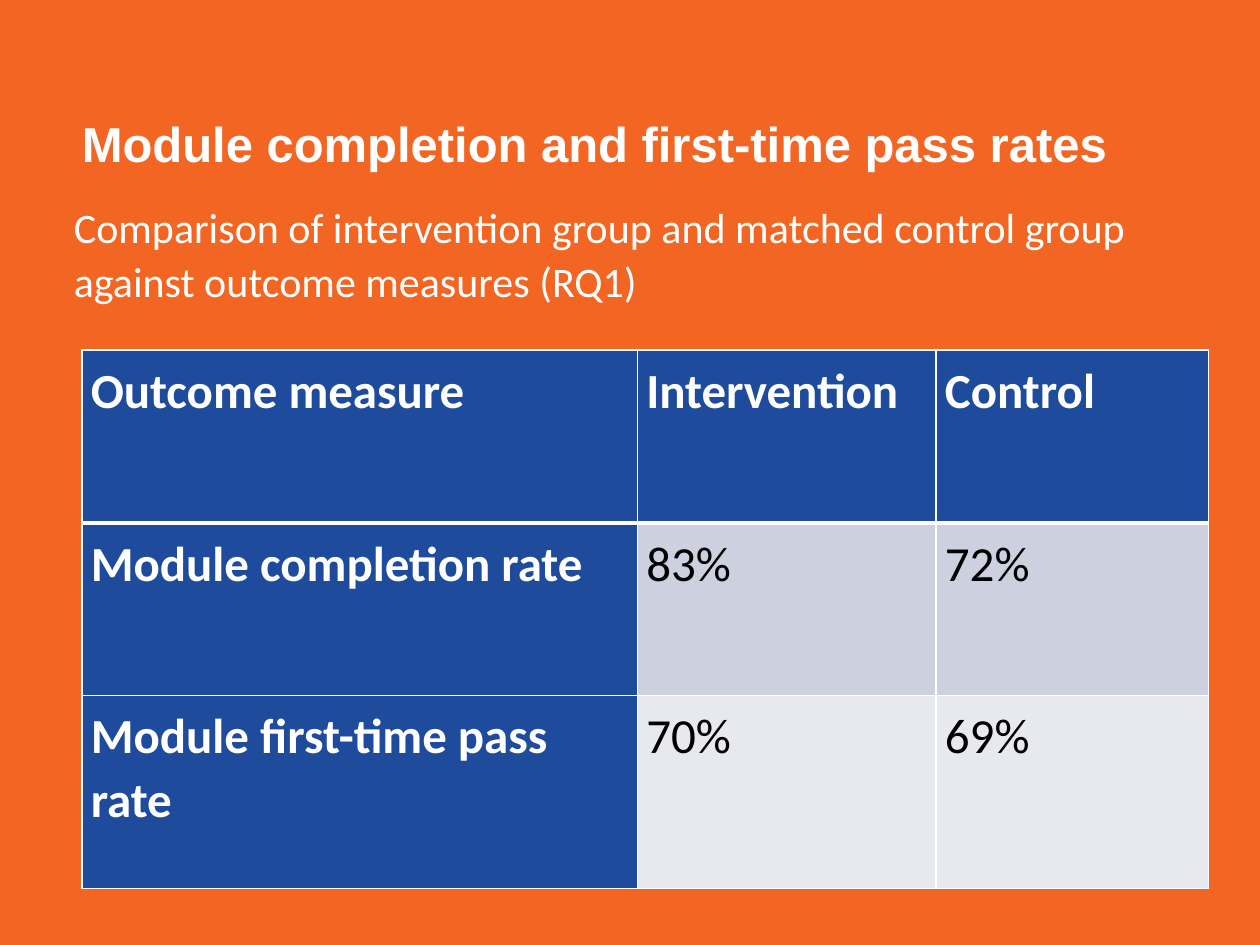
from dataclasses import dataclass

from lxml.etree import SubElement
from pptx import Presentation
from pptx.dml.color import RGBColor
from pptx.enum.text import MSO_ANCHOR, MSO_AUTO_SIZE, PP_ALIGN
from pptx.oxml.ns import qn
from pptx.util import Cm, Pt


@dataclass(frozen=True)
class Theme:
    background: str = "F26522"
    light_text: str = "FFFFFF"
    dark_text: str = "000000"
    heading_fill: str = "1E4B9B"
    row_fills: tuple = ("CDD0DE", "E8E9EF")
    rule: str = "FFFFFF"
    thin_rule: int = 1
    thick_rule: int = 3
    title_font: str = "Arial"
    body_font: str = "Calibri"
    title_size: int = 28
    intro_size: int = 24
    table_size: int = 28


THEME = Theme()
TITLE = "Module completion and first-time pass rates"
INTRO = ("Comparison of intervention group and matched control group "
         "against outcome measures (RQ1)")
OUTCOMES = [
    ("Outcome measure", "Intervention", "Control"),
    ("Module completion rate", "83%", "72%"),
    ("Module first-time pass rate", "70%", "69%"),
]
COLUMN_WIDTHS = (11.2, 6.02, 5.49)
ROW_HEIGHTS = (3.48, 3.48, 3.89)

TITLE_BOX = (1.65, 2.41, 21.08, 1.07)
INTRO_BOX = (1.24, 3.86, 22.71, 2.41)
TABLE_BOX = (1.65, 7.06, sum(COLUMN_WIDTHS), sum(ROW_HEIGHTS))

TITLE_PARAGRAPH = {"line_spacing": 0.9, "alignment": PP_ALIGN.LEFT}
BODY_PARAGRAPH = {"line_spacing": 1.07, "space_after": Pt(8)}
TITLE_FRAME = {
    "word_wrap": True,
    "auto_size": MSO_AUTO_SIZE.NONE,
    "vertical_anchor": MSO_ANCHOR.BOTTOM,
    "margin_left": 0,
    "margin_right": 0,
    "margin_top": 0,
    "margin_bottom": 0,
}
INTRO_FRAME = {"word_wrap": True, "auto_size": MSO_AUTO_SIZE.SHAPE_TO_FIT_TEXT}
CELL_FRAME = {
    "vertical_anchor": MSO_ANCHOR.TOP,
    "margin_left": Cm(0.18),
    "margin_right": Cm(0.18),
    "margin_top": Cm(0.15),
    "margin_bottom": Cm(0.15),
}


def apply_format(target, values):
    for name, value in values.items():
        setattr(target, name, value)


def write(frame, text, paragraph_format, color, **font_format):
    """Put one formatted paragraph into a text frame."""
    paragraph = frame.paragraphs[0]
    apply_format(paragraph, paragraph_format)
    run = paragraph.add_run()
    run.text = text
    apply_format(run.font, font_format)
    run.font.color.rgb = RGBColor.from_string(color)


def add_title(slide, box):
    title = slide.shapes.title
    title.left, title.top, title.width, title.height = map(Cm, box)
    apply_format(title.text_frame, TITLE_FRAME)
    write(title.text_frame, TITLE, TITLE_PARAGRAPH, THEME.light_text,
          name=THEME.title_font, size=Pt(THEME.title_size), bold=True)


def add_intro(slide, box):
    intro = slide.shapes.add_textbox(*map(Cm, box))
    apply_format(intro.text_frame, INTRO_FRAME)
    write(intro.text_frame, INTRO, BODY_PARAGRAPH, THEME.light_text,
          name=THEME.body_font, size=Pt(THEME.intro_size))


def draw_borders(cell, widths):
    """Rule the cell; widths maps L, R, T and B, in that order, to points."""
    properties = cell._tc.get_or_add_tcPr()
    for side, width in widths.items():
        line = SubElement(properties, qn(f"a:ln{side}"), w=str(Pt(width)))
        fill = SubElement(line, qn("a:solidFill"))
        SubElement(fill, qn("a:srgbClr"), val=THEME.rule)


def format_cell(cell, text, row, column):
    is_heading = row == 0 or column == 0
    thin, thick = THEME.thin_rule, THEME.thick_rule
    draw_borders(cell, {
        "L": thin,
        "R": thin,
        "T": thick if row == 1 else thin,
        "B": thick if row == 0 else thin,
    })
    fill = THEME.heading_fill if is_heading else THEME.row_fills[row - 1]
    cell.fill.solid()
    cell.fill.fore_color.rgb = RGBColor.from_string(fill)
    apply_format(cell, CELL_FRAME)
    write(cell.text_frame, text, BODY_PARAGRAPH,
          THEME.light_text if is_heading else THEME.dark_text,
          name=THEME.body_font, size=Pt(THEME.table_size), bold=is_heading)


def add_outcome_table(slide, box):
    outcomes = slide.shapes.add_table(
        len(OUTCOMES), len(OUTCOMES[0]), *map(Cm, box)).table
    outcomes.first_col = True
    for column, width in zip(outcomes.columns, COLUMN_WIDTHS):
        column.width = Cm(width)
    for row, height in zip(outcomes.rows, ROW_HEIGHTS):
        row.height = Cm(height)
    for row, texts in enumerate(OUTCOMES):
        for column, text in enumerate(texts):
            format_cell(outcomes.cell(row, column), text, row, column)


def main():
    presentation = Presentation()
    presentation.slide_width, presentation.slide_height = Cm(25.4), Cm(19.05)
    slide = presentation.slides.add_slide(
        presentation.slide_layouts.get_by_name("Title Only"))
    slide.background.fill.solid()
    slide.background.fill.fore_color.rgb = RGBColor.from_string(THEME.background)
    add_title(slide, TITLE_BOX)
    add_intro(slide, INTRO_BOX)
    add_outcome_table(slide, TABLE_BOX)
    presentation.save("out.pptx")


if __name__ == "__main__":
    main()
